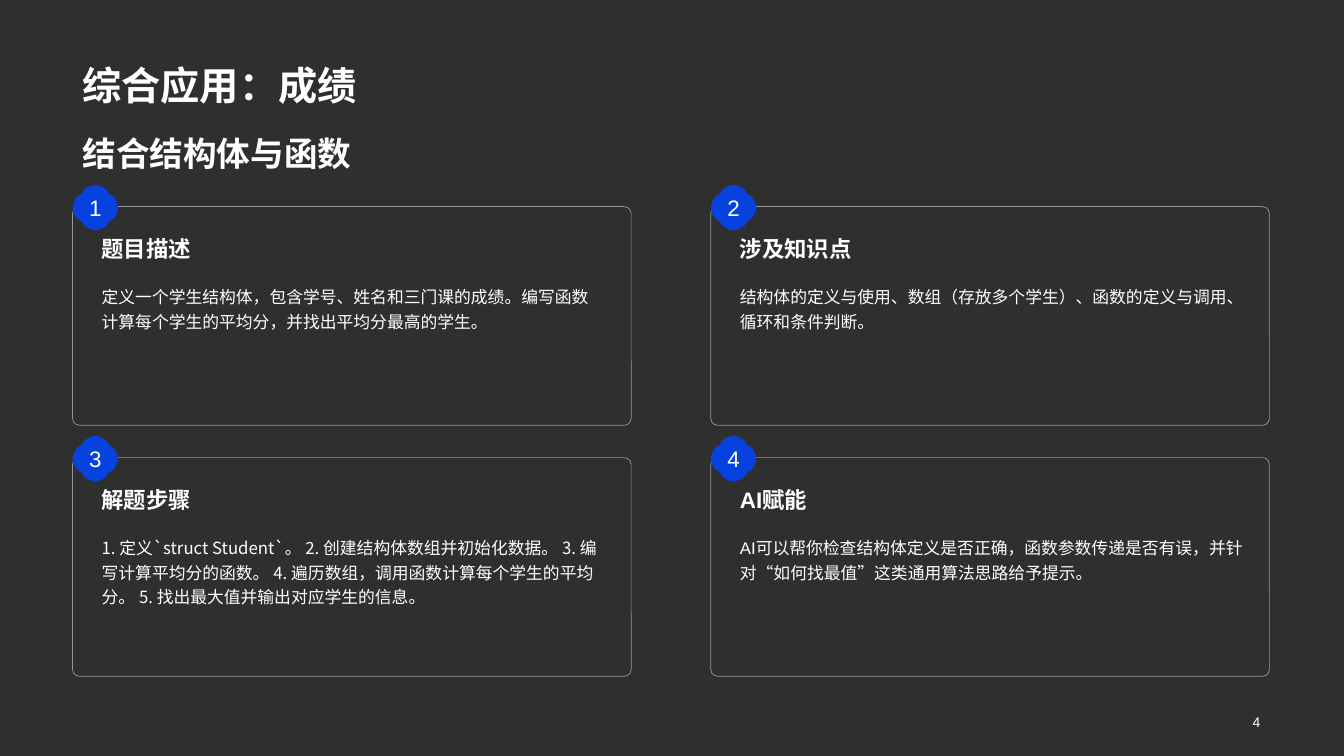
from math import cos, pi, sin

from lxml import etree
from pptx import Presentation
from pptx.dml.color import RGBColor
from pptx.enum.shapes import MSO_SHAPE
from pptx.enum.text import MSO_ANCHOR as Anchor, PP_ALIGN as Align
from pptx.oxml.ns import qn
from pptx.util import Inches, Pt

COLORS = {"background": "2F2F2F", "text": "FFFFFF", "badge": "0742DF"}
CJK, LATIN = "Noto Sans CJK SC", "Arial"
MARGIN, WIDTH = 0.72, 11.88
CARDS_TOP, COLUMN_STEP, ROW_STEP = 2.05, 6.33, 2.49
CARD_W, CARD_H, CARD_PAD = 5.54, 2.17, 0.19
BADGE_RADIUS = 0.225
CURVE_STEPS = 6

CARDS = [
    ("题目描述", "定义一个学生结构体，包含学号、姓名和三门课的成绩。编写函数计算每个学生的平均分，"
     "并找出平均分最高的学生。", CJK),
    ("涉及知识点", "结构体的定义与使用、数组（存放多个学生）、函数的定义与调用、循环和条件判断。", CJK),
    ("解题步骤", "1. 定义`struct Student`。 2. 创建结构体数组并初始化数据。 3. 编写计算平均分的函数。 "
     "4. 遍历数组，调用函数计算每个学生的平均分。 5. 找出最大值并输出对应学生的信息。", CJK),
    ("AI赋能", "AI可以帮你检查结构体定义是否正确，函数参数传递是否有误，并针对“如何找最值”"
     "这类通用算法思路给予提示。", LATIN),
]


def color(name):
    return RGBColor.from_string(COLORS[name])


def write(shape, text, size, font=CJK, bold=False, anchor=Anchor.MIDDLE,
          align=Align.LEFT, spacing=None, wrap=True):
    frame = shape.text_frame
    frame.word_wrap = wrap
    frame.vertical_anchor = anchor
    paragraph = frame.paragraphs[0]
    paragraph.alignment = align
    if spacing:
        paragraph.line_spacing = spacing
    run = paragraph.add_run()
    run.text = text
    run.font.size = Pt(size)
    run.font.bold = bold
    run.font.name = font
    run.font.color.rgb = color("text")
    east_asian = etree.SubElement(run.font._element, qn("a:ea"))
    east_asian.set("typeface", CJK)


def add_text(slide, box, text, size, **style):
    write(slide.shapes.add_textbox(*map(Inches, box)), text, size, **style)


def badge_outline():
    """Four rounded lobes with a notch between neighbours, around (0, 0)."""
    controls = [(0, -BADGE_RADIUS), (0.04, -BADGE_RADIUS), (0.08, -0.2), (0.11, -0.18)]
    half = []
    for step in range(CURVE_STEPS + 1):
        t = step / CURVE_STEPS
        weights = ((1 - t) ** 3, 3 * t * (1 - t) ** 2, 3 * t * t * (1 - t), t ** 3)
        half.append(tuple(sum(w * c[axis] for w, c in zip(weights, controls))
                          for axis in (0, 1)))
    lobe = [(-x, y) for x, y in reversed(half)] + half[1:] + [(0.135, -0.135)]
    turns = [(cos(k * pi / 2), sin(k * pi / 2)) for k in range(4)]
    return [(x * c - y * s, x * s + y * c) for c, s in turns for x, y in lobe]


def add_badge(slide, center_x, center_y, number):
    points = [(Inches(center_x + x), Inches(center_y + y)) for x, y in badge_outline()]
    builder = slide.shapes.build_freeform(*points[0])
    builder.add_line_segments(points[1:], close=True)
    badge = builder.convert_to_shape()
    badge.shadow.inherit = False
    badge.fill.solid()
    badge.fill.fore_color.rgb = color("badge")
    badge.line.fill.background()
    write(badge, str(number), 16, font=LATIN, align=Align.CENTER, wrap=False)


def add_card(slide, box, number, heading, body, font):
    left, top, width, height = box
    frame = slide.shapes.add_shape(MSO_SHAPE.ROUNDED_RECTANGLE, *map(Inches, box))
    frame.adjustments[0] = 0.032
    frame.shadow.inherit = False
    frame.fill.background()
    frame.line.width = Pt(0.5)
    frame.line.color.rgb = color("text")
    line_color = frame.line._ln.find(".//" + qn("a:srgbClr"))
    etree.SubElement(line_color, qn("a:alpha")).set("val", "50000")

    text_left, text_w = left + CARD_PAD, width - 0.35
    add_text(slide, (text_left, top + 0.08, text_w, 0.62), heading, 16,
             font=font, bold=True, spacing=1.2)
    add_text(slide, (text_left, top + 0.71, text_w, height - 0.78), body, 12,
             font=font, anchor=Anchor.TOP, spacing=1.2)
    add_badge(slide, left + BADGE_RADIUS, top + 0.01, number)


def add_header(slide, left, width):
    add_text(slide, (left, 0.14, width, 0.98), "综合应用：成绩", 28,
             bold=True, anchor=Anchor.BOTTOM)
    add_text(slide, (left, 1.24, width, 0.56), "结合结构体与函数", 24, bold=True)


def main():
    deck = Presentation()
    deck.slide_width, deck.slide_height = Inches(13.33), Inches(7.5)
    slide = deck.slides.add_slide(deck.slide_layouts[6])
    slide.background.fill.solid()
    slide.background.fill.fore_color.rgb = color("background")

    add_header(slide, MARGIN, WIDTH)
    for index, (heading, body, font) in enumerate(CARDS):
        row, column = divmod(index, 2)
        box = (MARGIN + column * COLUMN_STEP, CARDS_TOP + row * ROW_STEP, CARD_W, CARD_H)
        add_card(slide, box, index + 1, heading, body, font)
    add_text(slide, (8.6, 7.01, 4, 0.3), "4", 10, font=LATIN, align=Align.RIGHT)
    deck.save("out.pptx")


if __name__ == "__main__":
    main()
